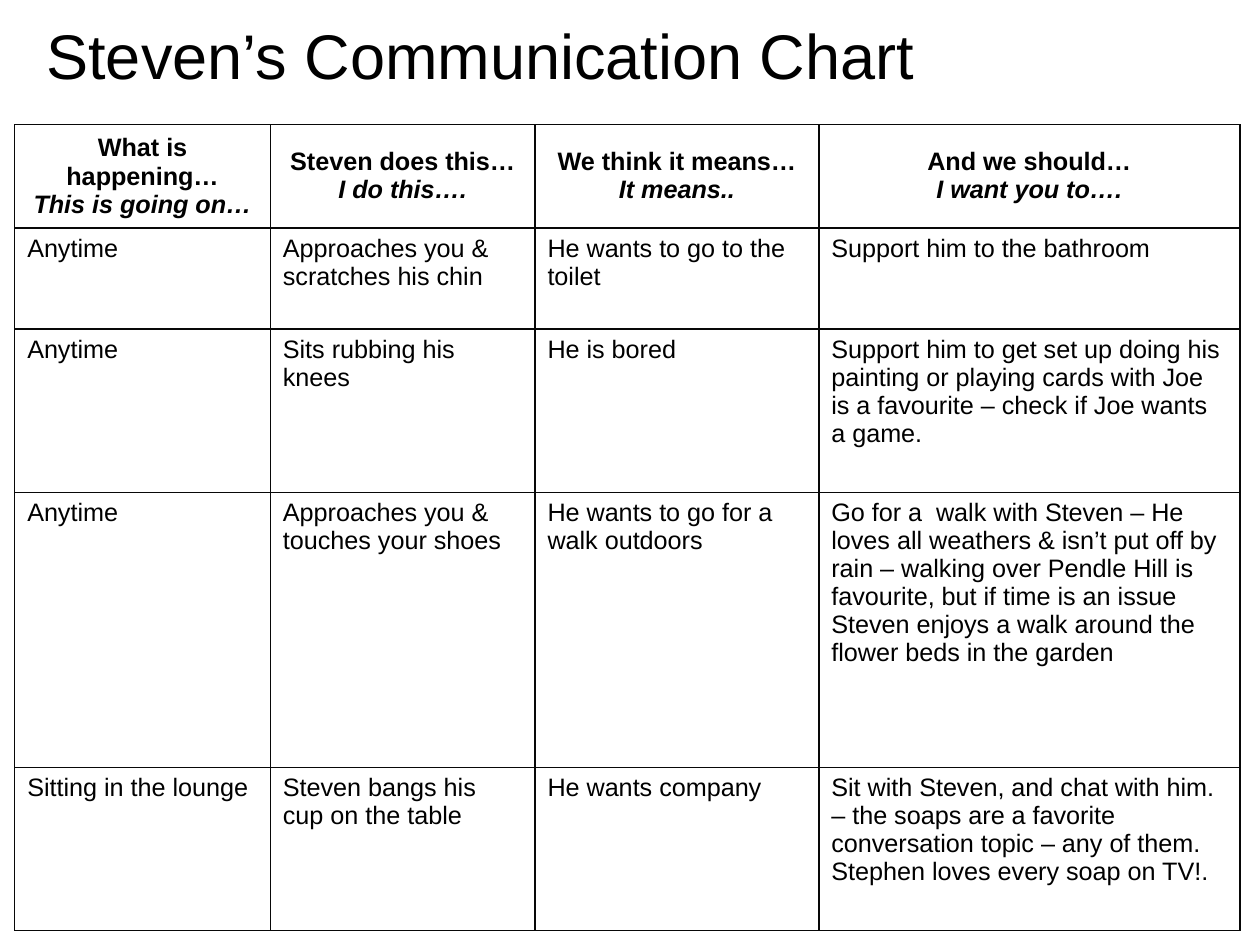
from lxml.etree import SubElement
from pptx import Presentation
from pptx.dml.color import RGBColor
from pptx.enum.text import MSO_ANCHOR as Anchor, MSO_AUTO_SIZE as AutoSize, PP_ALIGN as Align
from pptx.oxml.ns import qn
from pptx.util import Cm, Pt

COLOURS = {"text": "000000", "border": "080808"}
FONT = "Arial"
COLUMN_WIDTHS = (5.72, 5.92, 6.35, 9.42)
ROW_HEIGHTS = (2.31, 2.26, 3.66, 6.15, 3.66)

HEADINGS = [
    ("What is happening…", "This is going on…"),
    ("Steven does this…", "I do this…."),
    ("We think it means…", "It means.."),
    ("And we should…", "I want you to…."),
]
SITUATIONS = [
    ("Anytime", "Approaches you & scratches his chin",
     "He wants to go to the toilet", "Support him to the bathroom"),
    ("Anytime", "Sits rubbing his knees", "He is bored",
     "Support him to get set up doing his painting or playing cards with Joe "
     "is a favourite – check if Joe wants a game."),
    ("Anytime", "Approaches you & touches your shoes",
     "He wants to go for a walk outdoors",
     "Go for a  walk with Steven – He loves all weathers & isn’t put off by rain "
     "– walking over Pendle Hill is favourite, but if time is an issue Steven "
     "enjoys a walk around the flower beds in the garden"),
    ("Sitting in the lounge", "Steven bangs his cup on the table", "He wants company",
     "Sit with Steven, and chat with him. – the soaps are a favorite conversation "
     "topic – any of them. Stephen loves every soap on TV!."),
]


def write_text(para, text, size=16, bold=False, italic=False, align=Align.LEFT):
    para.alignment = align
    span = para.add_run()
    span.text = text
    font = span.font
    font.name, font.size, font.bold, font.italic = FONT, Pt(size), bold, italic
    font.color.rgb = RGBColor.from_string(COLOURS["text"])


def add_title(page, text):
    title = page.shapes.title
    title.left, title.top, title.width, title.height = Cm(0.76), Cm(-0.1), Cm(20.75), Cm(2.31)
    frame = title.text_frame
    frame.auto_size = AutoSize.NONE
    frame.word_wrap = True
    frame.vertical_anchor = Anchor.MIDDLE
    frame.margin_left = frame.margin_right = Cm(0.28)
    frame.margin_top, frame.margin_bottom = Cm(0.46), Cm(0.13)
    write_text(frame.paragraphs[0], text, size=40)


def format_cell(cell, anchor):
    cell.vertical_anchor = anchor
    cell.margin_left = cell.margin_right = Cm(0.28)
    cell.margin_top = cell.margin_bottom = Cm(0.15)
    properties = cell._tc.get_or_add_tcPr()
    for side in ("a:lnL", "a:lnR", "a:lnT", "a:lnB"):
        line = SubElement(properties, qn(side), w=str(Pt(1)))
        fill = SubElement(line, qn("a:solidFill"))
        SubElement(fill, qn("a:srgbClr"), val=COLOURS["border"])
    cell.fill.background()


def add_chart_table(page):
    table = page.shapes.add_table(
        len(ROW_HEIGHTS), len(COLUMN_WIDTHS), Cm(0.33), Cm(2.79),
        Cm(sum(COLUMN_WIDTHS)), Cm(sum(ROW_HEIGHTS))).table
    table.first_row = table.horz_banding = False
    for column, width in zip(table.columns, COLUMN_WIDTHS):
        column.width = Cm(width)
    for row, height in zip(table.rows, ROW_HEIGHTS):
        row.height = Cm(height)

    # Heading row: bold, with the person's own words in italics below
    for index, (heading, own_words) in enumerate(HEADINGS):
        cell = table.cell(0, index)
        format_cell(cell, Anchor.MIDDLE)
        frame = cell.text_frame
        write_text(frame.paragraphs[0], heading, bold=True, align=Align.CENTER)
        write_text(frame.add_paragraph(), own_words, bold=True, italic=True, align=Align.CENTER)

    # One row for each situation
    for row_index, situation in enumerate(SITUATIONS, start=1):
        for index, text in enumerate(situation):
            cell = table.cell(row_index, index)
            format_cell(cell, Anchor.TOP)
            write_text(cell.text_frame.paragraphs[0], text)


def main():
    deck = Presentation()
    deck.slide_width, deck.slide_height = Cm(28.19), Cm(21.08)
    page = deck.slides.add_slide(deck.slide_layouts[5])
    add_title(page, "Steven’s Communication Chart")
    add_chart_table(page)
    deck.save("out.pptx")


if __name__ == "__main__":
    main()
